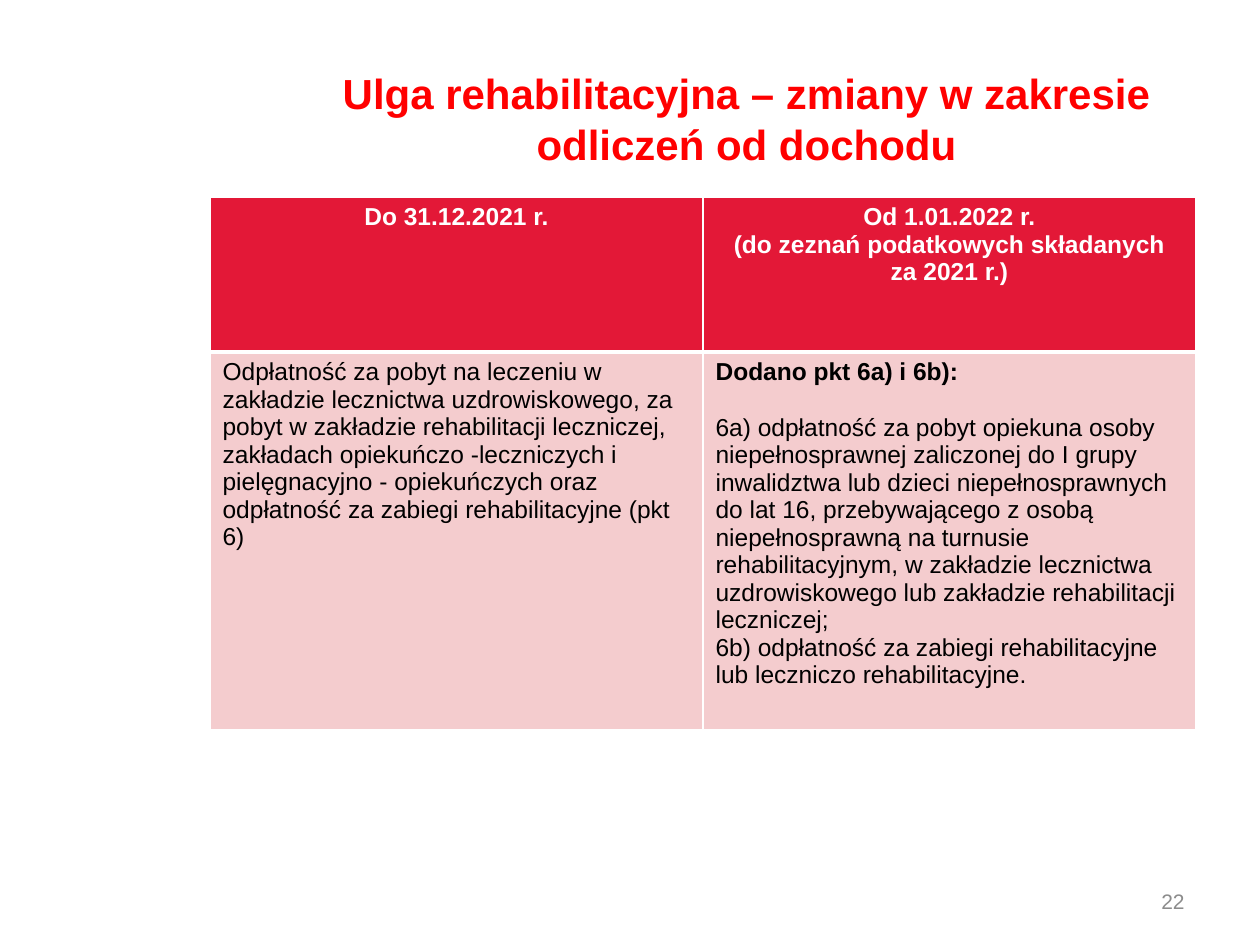
from lxml import etree
from pptx import Presentation
from pptx import util as u
from pptx.dml.color import RGBColor
from pptx.enum import text
from pptx.oxml.ns import qn

PX = u.Inches(1) // 126
FONT = "Arial"
RED = RGBColor(0xFF, 0x00, 0x00)
CRIMSON = RGBColor(0xE3, 0x18, 0x37)
PINK = RGBColor(0xF4, 0xCC, 0xCE)
WHITE = RGBColor(0xFF, 0xFF, 0xFF)
BLACK = RGBColor(0x00, 0x00, 0x00)
GREY = RGBColor(0x8C, 0x8C, 0x8C)
LEFT, CENTER, RIGHT = text.PP_ALIGN.LEFT, text.PP_ALIGN.CENTER, text.PP_ALIGN.RIGHT

TITLE = "Ulga rehabilitacyjna – zmiany w zakresie odliczeń od dochodu"
PAGE = "22"
HEADERS = [
    ["Do 31.12.2021 r."],
    ["Od 1.01.2022 r.", "(do zeznań podatkowych składanych", "za 2021 r.)"],
]
BEFORE = [
    "Odpłatność za pobyt na leczeniu w zakładzie lecznictwa uzdrowiskowego, "
    "za pobyt w zakładzie rehabilitacji leczniczej, zakładach opiekuńczo "
    "-leczniczych i pielęgnacyjno - opiekuńczych oraz odpłatność za zabiegi "
    "rehabilitacyjne (pkt 6)",
]
ADDED = "Dodano pkt 6a) i 6b):"
POINTS = [
    "6a) odpłatność za pobyt opiekuna osoby niepełnosprawnej zaliczonej do "
    "I grupy inwalidztwa lub dzieci niepełnosprawnych do lat 16, "
    "przebywającego z osobą niepełnosprawną na turnusie rehabilitacyjnym, "
    "w zakładzie lecznictwa uzdrowiskowego lub zakładzie rehabilitacji "
    "leczniczej;",
    "6b) odpłatność za zabiegi rehabilitacyjne lub leczniczo rehabilitacyjne.",
]
ROWS = [
    (155, CRIMSON, WHITE, CENTER, True, HEADERS),
    (378, PINK, BLACK, LEFT, False, [BEFORE, [ADDED] + POINTS]),
]
TABLE_BOX = (210, 197, 986)


def write(tf, lines, size, color, align, bold=False):
    for i, line in enumerate(lines):
        p = tf.paragraphs[0] if i == 0 else tf.add_paragraph()
        p.alignment = align
        r = p.add_run()
        r.text = line
        r.font.name, r.font.size, r.font.bold = FONT, u.Pt(size), bold
        r.font.color.rgb = color


def add_text(s, box, line, size, color, align, bold=False):
    tf = s.shapes.add_textbox(*(v * PX for v in box)).text_frame
    tf.word_wrap = True
    tf.vertical_anchor = text.MSO_ANCHOR.MIDDLE
    write(tf, [line], size, color, align, bold)


def add_borders(cell, widths):
    tcPr = cell._tc.get_or_add_tcPr()
    for side, width in widths.items():
        ln = etree.SubElement(tcPr, qn(f"a:ln{side}"), w=str(u.Pt(width)))
        fill = etree.SubElement(ln, qn("a:solidFill"))
        etree.SubElement(fill, qn("a:srgbClr"), val=str(WHITE))


def add_comparison(s):
    left, top, width = TABLE_BOX
    height = sum(row[0] for row in ROWS)
    table = s.shapes.add_table(
        len(ROWS), len(HEADERS), left * PX, top * PX, width * PX, height * PX
    ).table
    for col in table.columns:
        col.width = width * PX // len(HEADERS)
    for i, (row_height, fill, color, align, bold, cells) in enumerate(ROWS):
        table.rows[i].height = row_height * PX
        rule_above, rule_below = (1, 3) if i == 0 else (3, 1)
        for j, lines in enumerate(cells):
            cell = table.cell(i, j)
            add_borders(cell, {"L": 1, "R": 1, "T": rule_above, "B": rule_below})
            cell.fill.solid()
            cell.fill.fore_color.rgb = fill
            write(cell.text_frame, lines, 14, color, align, bold)
    added, first_point = table.cell(1, 1).text_frame.paragraphs[:2]
    added.runs[0].font.bold = True
    first_point.space_before = u.Pt(16)


def main():
    prs = Presentation()
    prs.slide_width, prs.slide_height = 1260 * PX, 945 * PX
    s = prs.slides.add_slide(prs.slide_layouts[6])
    add_text(s, (903, 876, 294, 50), PAGE, 12, GREY, RIGHT)
    add_text(s, (319, 39, 855, 158), TITLE, 24, RED, CENTER, True)
    add_comparison(s)
    prs.save("out.pptx")


if __name__ == "__main__":
    main()
